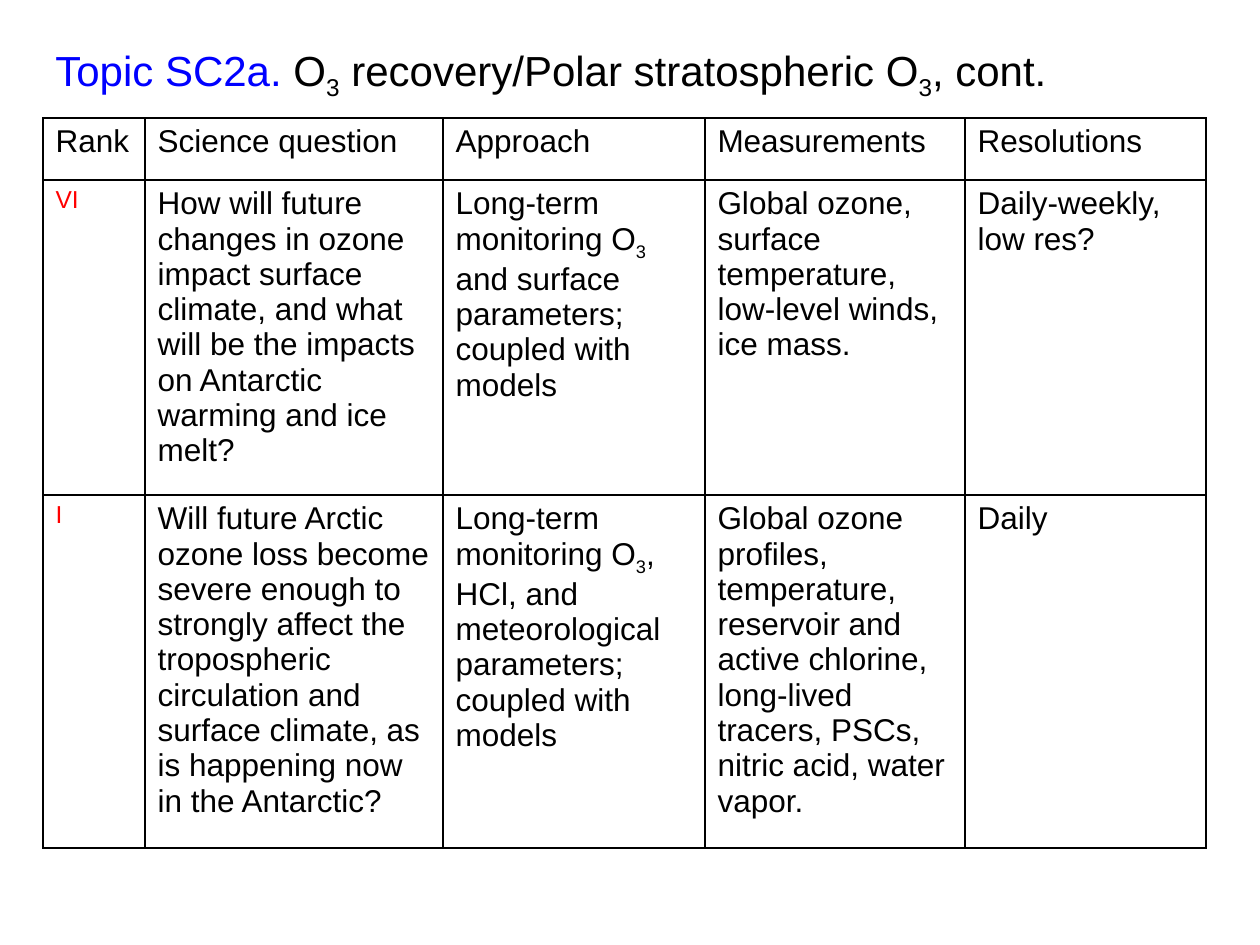
"""Build the ozone recovery slide: a heading above a ranked table of science questions."""
from dataclasses import dataclass

from lxml import etree
from pptx import Presentation, util as u
from pptx.dml.color import RGBColor
from pptx.enum import text
from pptx.oxml.ns import qn


@dataclass(frozen=True)
class Theme:
    font: str = "Arial"
    ink: str = "000000"
    topic: str = "0000FF"
    rank: str = "FF0000"
    heading_size: int = 24
    body_size: int = 18
    rank_size: int = 14
    border_width: int = 1
    subscript: int = -25000


@dataclass(frozen=True)
class Part:
    words: str
    color: str
    subscript: bool = False


@dataclass(frozen=True)
class Question:
    rank: str
    question: str
    approach: str
    measurements: str
    resolutions: str


THEME = Theme()
OZONE = "O3"
COLUMN_WIDTHS = (102, 298, 262, 260, 241)
ROW_HEIGHTS = (62, 315, 353)
HEADER = Question("Rank", "Science question", "Approach", "Measurements", "Resolutions")
QUESTIONS = (
    Question(
        "VI",
        "How will future changes in ozone impact surface climate, and what will be "
        "the impacts on Antarctic warming and ice melt?",
        "Long-term monitoring O3 and surface parameters; coupled with models",
        "Global ozone, surface temperature, low-level winds, ice mass.",
        "Daily-weekly, low res?",
    ),
    Question(
        "I",
        "Will future Arctic ozone loss become severe enough to strongly affect the "
        "tropospheric circulation and surface climate, as is happening now in the Antarctic?",
        "Long-term monitoring O3, HCl, and meteorological parameters; coupled with models",
        "Global ozone profiles, temperature, reservoir and active chlorine, "
        "long-lived tracers, PSCs, nitric acid, water vapor.",
        "Daily",
    ),
)


def px(length: int) -> u.Emu:
    return u.Emu(round(length * u.Inches(1) / 126))


def split_ozone(words: str, color: str) -> list[Part]:
    pieces = words.split(OZONE)
    parts = []
    for piece in pieces[:-1]:
        parts += [Part(piece + "O", color), Part("3", color, subscript=True)]
    return parts + [Part(pieces[-1], color)]


def write(frame, parts: list[Part], size: int) -> None:
    paragraph = frame.paragraphs[0]
    for part in parts:
        run = paragraph.add_run()
        run.text = part.words
        run.font.name = THEME.font
        run.font.size = u.Pt(size)
        run.font.color.rgb = RGBColor.from_string(part.color)
        if part.subscript:
            run.font._element.set("baseline", str(THEME.subscript))


def draw_borders(cell) -> None:
    properties = cell._tc.get_or_add_tcPr()
    for position, side in enumerate(("lnL", "lnR", "lnT", "lnB")):
        line = etree.Element(qn(f"a:{side}"), w=str(u.Pt(THEME.border_width)))
        fill = etree.SubElement(line, qn("a:solidFill"))
        etree.SubElement(fill, qn("a:srgbClr"), val=THEME.ink)
        properties.insert(position, line)


def draw_heading(slide) -> None:
    heading = slide.shapes.add_textbox(px(43), px(38), px(1046), px(63))
    frame = heading.text_frame
    frame.word_wrap = False
    frame.auto_size = text.MSO_AUTO_SIZE.SHAPE_TO_FIT_TEXT
    rest = split_ozone(" O3 recovery/Polar stratospheric O3, cont.", THEME.ink)
    write(frame, [Part("Topic SC2a.", THEME.topic), *rest], THEME.heading_size)


def draw_row(cells, entry: Question, ranked: bool) -> None:
    columns = (entry.rank, entry.question, entry.approach, entry.measurements, entry.resolutions)
    for index, (cell, words) in enumerate(zip(cells, columns)):
        is_rank = ranked and index == 0
        color = THEME.rank if is_rank else THEME.ink
        size = THEME.rank_size if is_rank else THEME.body_size
        cell.fill.background()
        draw_borders(cell)
        write(cell.text_frame, split_ozone(words, color), size)


def draw_questions(slide) -> None:
    entries = (HEADER, *QUESTIONS)
    table = slide.shapes.add_table(
        len(entries), len(COLUMN_WIDTHS), px(43), px(118),
        px(sum(COLUMN_WIDTHS)), px(sum(ROW_HEIGHTS)),
    ).table
    table.first_row = table.horz_banding = False
    for column, width in zip(table.columns, COLUMN_WIDTHS):
        column.width = px(width)
    for row, height, entry in zip(table.rows, ROW_HEIGHTS, entries):
        row.height = px(height)
        draw_row(row.cells, entry, ranked=entry is not HEADER)


def main() -> None:
    deck = Presentation()
    deck.slide_width, deck.slide_height = px(1260), px(945)
    slide = deck.slides.add_slide(deck.slide_layouts[6])
    draw_questions(slide)
    draw_heading(slide)
    deck.save("out.pptx")


if __name__ == "__main__":
    main()
